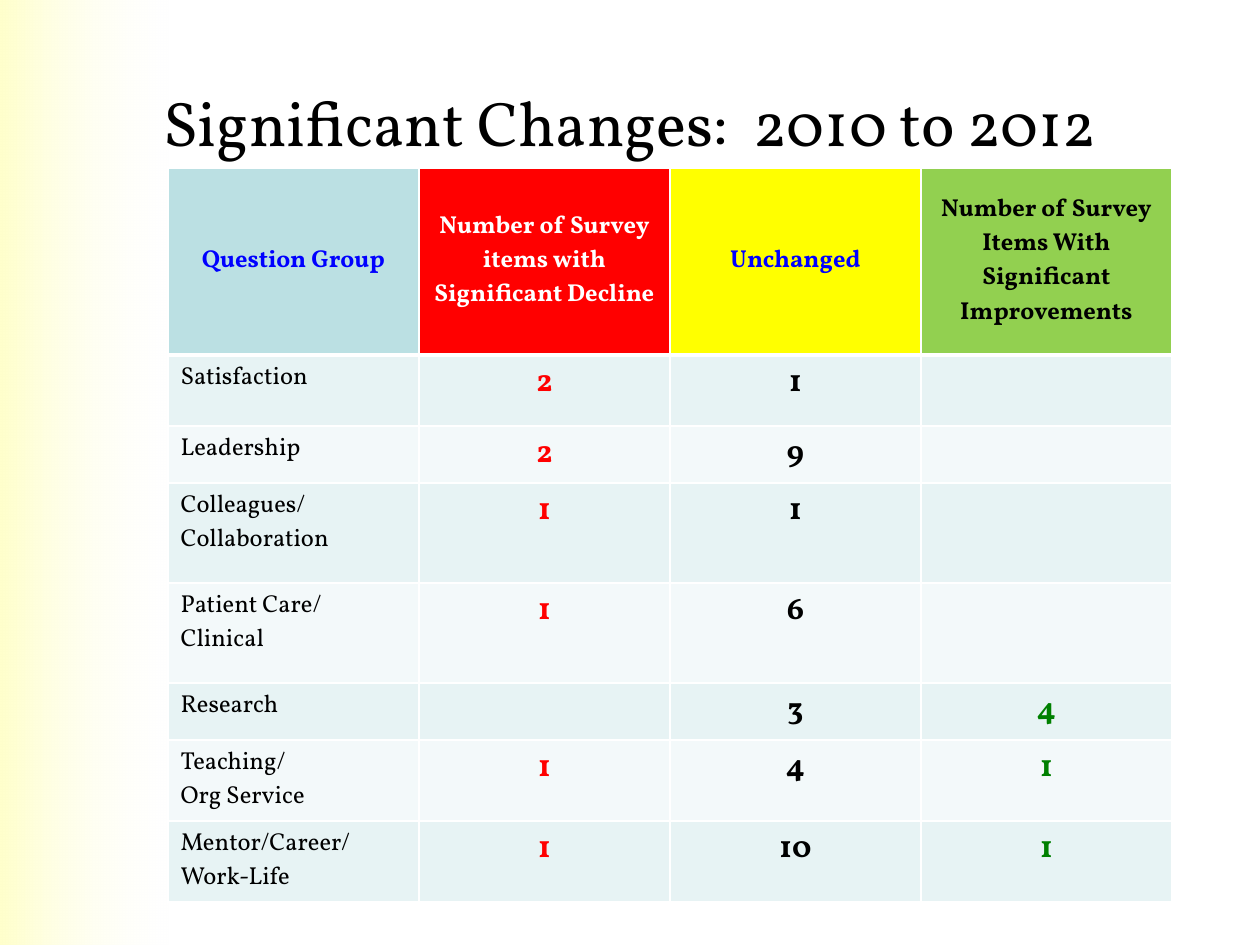
import dataclasses
import typing

import lxml.etree
import pptx
import pptx.dml.color
import pptx.enum.dml
import pptx.enum.shapes
import pptx.enum.text
import pptx.oxml.ns
import pptx.util

Align = pptx.enum.text.PP_ALIGN
Anchor = pptx.enum.text.MSO_ANCHOR
qn = pptx.oxml.ns.qn


@dataclasses.dataclass(frozen=True)
class Theme:
    font: str = "Vollkorn"
    black: str = "000000"
    white: str = "FFFFFF"
    blue: str = "0000FF"
    red: str = "FF0000"
    green: str = "008000"
    yellow: str = "FFFF00"
    lime: str = "92D050"
    teal: str = "BBE0E3"
    bands: tuple[str, str] = ("E7F3F4", "F3F9FA")
    cream: str = "FFFFCC"
    pale: str = "FFFFF4"
    title: int = 36
    label: int = 14
    count: int = 18


THEME = Theme()


class Head(typing.NamedTuple):
    text: str
    fill: str
    ink: str


class Group(typing.NamedTuple):
    lines: tuple[str, ...]
    counts: tuple[str, str, str]
    height: int


HEADS = (
    Head("Question Group", THEME.teal, THEME.blue),
    Head("Number of Survey items with Significant Decline", THEME.red, THEME.white),
    Head("Unchanged", THEME.yellow, THEME.blue),
    Head("Number of Survey Items With Significant Improvements", THEME.lime, THEME.black),
)
GROUPS = (
    Group(("Satisfaction",), ("2", "1", ""), 71),
    Group(("Leadership",), ("2", "9", ""), 57),
    Group(("Colleagues/", "Collaboration"), ("1", "1", ""), 100),
    Group(("Patient Care/", "Clinical"), ("1", "6", ""), 100),
    Group(("Research",), ("", "3", "4"), 57),
    Group(("Teaching/", "Org Service"), ("1", "4", "1"), 81),
    Group(("Mentor/Career/ Work-Life",), ("1", "10", "1"), 81),
)
INKS = (THEME.red, THEME.black, THEME.green)
HEAD_TALL = 187
COL_WIDE = 251


def px(count: int) -> pptx.util.Emu:
    return pptx.util.Emu(round(count * 914400 / 126))


def rgb(code: str) -> pptx.dml.color.RGBColor:
    return pptx.dml.color.RGBColor.from_string(code)


def write(frame, lines: typing.Sequence[str], size: int, ink: str,
          bold: bool = False, align=Align.CENTER) -> None:
    for i, line in enumerate(lines):
        para = frame.paragraphs[0] if i == 0 else frame.add_paragraph()
        para.alignment = align
        run = para.add_run()
        run.text = line
        run.font.name = THEME.font
        run.font.size = pptx.util.Pt(size)
        run.font.bold = bold
        run.font.color.rgb = rgb(ink)


def paint(cell, fill: str, base: float = 1) -> None:
    cell.fill.solid()
    cell.fill.fore_color.rgb = rgb(fill)
    props = cell._tc.get_or_add_tcPr()
    for i, (side, wide) in enumerate((("L", 1), ("R", 1), ("T", 1), ("B", base))):
        line = lxml.etree.Element(qn(f"a:ln{side}"), w=str(pptx.util.Pt(wide)))
        solid = lxml.etree.SubElement(line, qn("a:solidFill"))
        lxml.etree.SubElement(solid, qn("a:srgbClr"), val=THEME.white)
        props.insert(i, line)


def add_band(slide) -> None:
    band = slide.shapes.add_shape(
        pptx.enum.shapes.MSO_SHAPE.RECTANGLE, px(0), px(0), px(168), px(945))
    band.shadow.inherit = False
    band.line.fill.background()
    band.fill.gradient()
    band.fill.gradient_angle = 0
    for stop, code in zip(band.fill.gradient_stops, (THEME.cream, THEME.pale)):
        stop.color.rgb = rgb(code)
    last = band._element.findall(".//" + qn("a:gs"))[-1]
    lxml.etree.SubElement(last[0], qn("a:alpha"), val="0")
    slide.shapes._spTree.insert(2, band._element)


def add_title(slide) -> None:
    title = slide.shapes.title
    title.left, title.top, title.width, title.height = map(px, (63, 42, 1134, 158))
    title.text_frame.vertical_anchor = Anchor.MIDDLE
    write(title.text_frame, ("Significant Changes:  2010 to 2012",), THEME.title, THEME.black)


def add_grid(slide) -> None:
    talls = (HEAD_TALL, *(group.height for group in GROUPS))
    grid = slide.shapes.add_table(
        len(talls), len(HEADS), px(168), px(168),
        px(COL_WIDE * len(HEADS)), px(sum(talls))).table
    for col in grid.columns:
        col.width = px(COL_WIDE)
    for row, tall in zip(grid.rows, talls):
        row.height = px(tall)
    for c, head in enumerate(HEADS):
        cell = grid.cell(0, c)
        cell.vertical_anchor = Anchor.MIDDLE
        write(cell.text_frame, (head.text,), THEME.label, head.ink, True)
        paint(cell, head.fill, 3)
    for r, group in enumerate(GROUPS, 1):
        for c in range(len(HEADS)):
            paint(grid.cell(r, c), THEME.bands[(r - 1) % 2])
        write(grid.cell(r, 0).text_frame, group.lines, THEME.label, THEME.black,
              align=Align.LEFT)
        for c, (count, ink) in enumerate(zip(group.counts, INKS), 1):
            if count:
                write(grid.cell(r, c).text_frame, (count,), THEME.count, ink, True)


def main() -> None:
    deck = pptx.Presentation()
    deck.slide_width, deck.slide_height = px(1260), px(945)
    slide = deck.slides.add_slide(deck.slide_layouts[5])
    add_band(slide)
    add_title(slide)
    add_grid(slide)
    deck.save("out.pptx")


if __name__ == "__main__":
    main()
